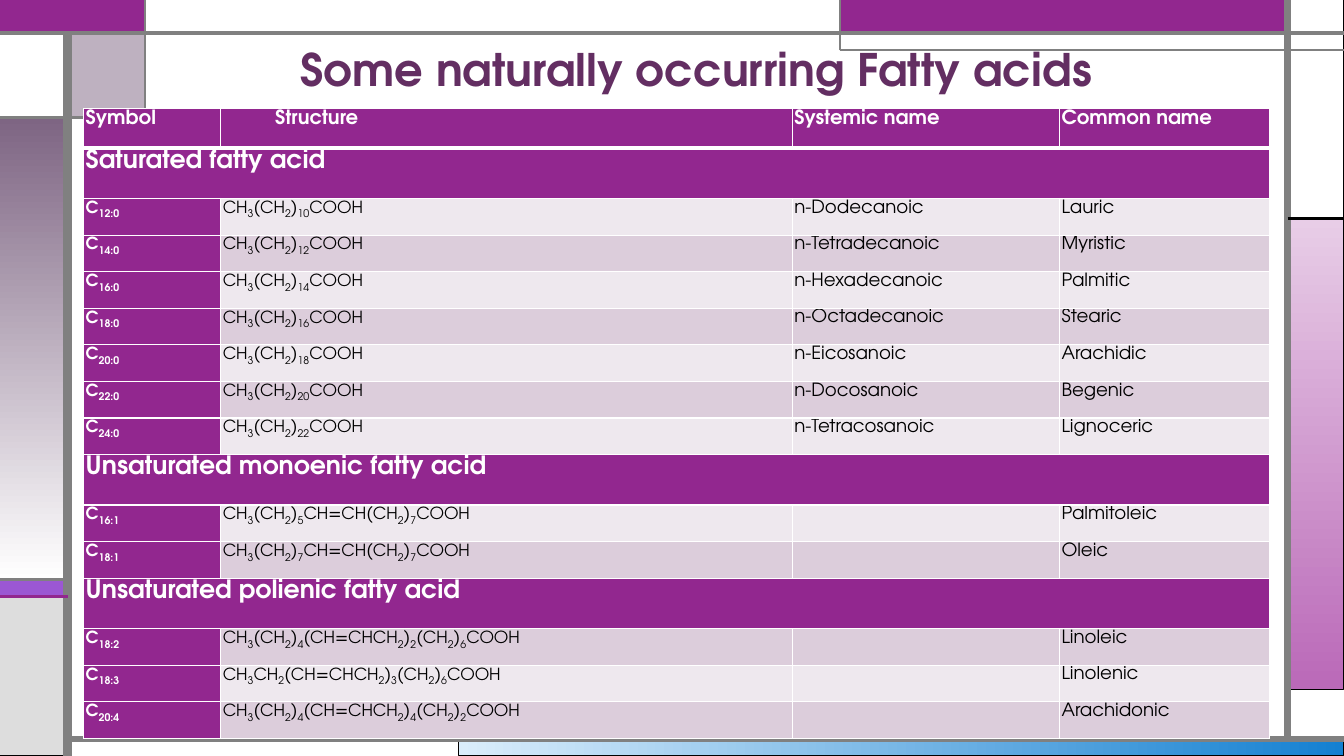
from dataclasses import dataclass
from itertools import groupby

from lxml.etree import SubElement
from pptx import Presentation
from pptx.dml.color import RGBColor
from pptx.enum.shapes import MSO_CONNECTOR as Connector, MSO_SHAPE as Shape
from pptx.enum.text import MSO_ANCHOR as Anchor, PP_ALIGN as Align
from pptx.oxml.ns import qn
from pptx.util import Inches, Pt


@dataclass(frozen=True)
class Theme:
    font: str = "TeX Gyre Adventor"
    purple: str = "92278F"
    title: str = "632E62"
    black: str = "000000"
    white: str = "FFFFFF"
    gray: str = "808080"
    silver: str = "DDDDDD"
    violet: str = "9B57D3"
    indigo: str = "755DD9"
    mauve: str = "7E6583"
    sky: tuple = ("DAEDFB", "1480D1")
    orchid: tuple = ("E8CDE7", "BA69B8")
    bands: tuple = ("EEE8EE", "DCCDDB")
    title_size: float = 32
    group_size: float = 18
    header_size: float = 14
    body_size: float = 13


@dataclass(frozen=True)
class Box:
    left: float
    top: float
    width: float
    height: float


THEME = Theme()
SUBSCRIPTS = "0123456789:"

HEADERS = ["Symbol", "Structure", "Systemic name", "Common name"]
GROUPS = {
    "Saturated fatty acid": [
        ("С12:0", "СН3(СН2)10СООН", "n-Dodecanoic", "Lauric"),
        ("С14:0", "СН3(СН2)12СООН", "n-Tetradecanoic", "Myristic"),
        ("С16:0", "СН3(СН2)14СООН", "n-Hexadecanoic", "Palmitic"),
        ("С18:0", "СН3(СН2)16СООН", "n-Octadecanoic", "Stearic"),
        ("С20:0", "СН3(СН2)18СООН", "n-Eicosanoic", "Arachidic"),
        ("С22:0", "СН3(СН2)20СООН", "n-Docosanoic", "Begenic"),
        ("С24:0", "СН3(СН2)22СООН", "n-Tetracosanoic", "Lignoceric"),
    ],
    "Unsaturated monoenic fatty acid": [
        ("С16:1", "СН3(СН2)5СН=СН(СН2)7СООН", "", "Palmitoleic"),
        ("С18:1", "СН3(СН2)7СН=СН(СН2)7СООН", "", "Oleic"),
    ],
    "Unsaturated polienic fatty acid": [
        ("С18:2", "СН3(СН2)4(СН=СНСН2)2(СН2)6СООН", "", "Linoleic"),
        ("С18:3", "СН3СН2(СН=СНСН2)3(СН2)6СООН", "", "Linolenic"),
        ("С20:4", "СН3(СН2)4(СН=СНСН2)4(СН2)2СООН", "", "Arachidonic"),
    ],
}


def rgb(color):
    return RGBColor.from_string(color)


def write(frame, text, size, color, bold=False, align=Align.JUSTIFY,
          spacing=1.07, after=0, indent=0, formula=False):
    """Write one paragraph; in a formula, digits and colons become subscripts."""
    paragraph = frame.paragraphs[0]
    paragraph.alignment = align
    paragraph.line_spacing = spacing
    paragraph.space_after = Pt(after)
    if indent:
        paragraph._p.get_or_add_pPr().set("marL", str(Inches(indent)))
    for lowered, letters in groupby(text, lambda c: formula and c in SUBSCRIPTS):
        run = paragraph.add_run()
        run.text = "".join(letters)
        font = run.font
        font.name, font.size, font.bold = THEME.font, Pt(size), bold
        font.color.rgb = rgb(color)
        if lowered:
            run._r.get_or_add_rPr().set("baseline", "-25000")


def add_panel(slide, edges, fill, line=THEME.black, weight=0.75, angle=0, alpha=None):
    """Draw a rectangle from its left, top, right and bottom edges."""
    left, top, right, bottom = edges
    panel = slide.shapes.add_shape(Shape.RECTANGLE, Inches(left), Inches(top),
                                   Inches(right - left), Inches(bottom - top))
    panel.shadow.inherit = False
    panel.line.color.rgb = rgb(line)
    panel.line.width = Pt(weight)
    if isinstance(fill, tuple):
        panel.fill.gradient()
        panel.fill.gradient_angle = angle
        for stop, color in zip(panel.fill.gradient_stops, fill):
            stop.color.rgb = rgb(color)
    else:
        panel.fill.solid()
        panel.fill.fore_color.rgb = rgb(fill)
    if alpha:
        tint = panel._element.spPr.find(qn("a:solidFill")).find(qn("a:srgbClr"))
        SubElement(tint, qn("a:alpha")).set("val", str(alpha * 1000))


def add_rule(slide, ends, weight, color=THEME.gray):
    rule = slide.shapes.add_connector(Connector.STRAIGHT, *map(Inches, ends))
    rule.line.color.rgb = rgb(color)
    rule.line.width = Pt(weight)
    SubElement(rule._element.spPr, qn("a:effectLst"))


def add_frame(slide, box):
    """Draw the coloured panels and gray rules around the slide's edge."""
    t = THEME
    left, top = box.left, box.top
    right, bottom = left + box.width, top + box.height
    rail, tab, banner, side = left + 0.67, left + 1.44, left + 8.33, right - 0.56
    strip, lip, shelf, step = top + 0.33, top + 0.5, top + 1.17, top + 2.17
    stripe, stripe_end, floor = top + 5.75, top + 5.92, bottom - 0.17

    add_panel(slide, (left + 4.55, floor, right, bottom), t.sky)
    add_panel(slide, (side, step, right, top + 6.84), t.orchid, angle=270)
    add_panel(slide, (left, stripe, rail, stripe_end), t.violet)
    add_panel(slide, (left, stripe_end, rail, bottom), t.silver)
    add_panel(slide, (side, top, right, step), t.white)
    add_panel(slide, (banner, top, side, strip), t.purple, t.indigo)
    add_panel(slide, (rail, strip, tab, shelf), t.mauve, alpha=50)
    add_panel(slide, (left, shelf, rail, stripe), (t.mauve, t.white), angle=270)
    add_panel(slide, (left, strip, rail, shelf), t.white)
    add_panel(slide, (left, top, tab, strip), t.purple, t.purple, 1.5)
    add_panel(slide, (tab, top, banner, strip), t.white, t.gray)

    add_rule(slide, (rail, bottom, rail, strip), 6)
    add_rule(slide, (rail, floor, right, floor), 4.5)
    add_rule(slide, (side, floor, side, top), 4.5)
    add_rule(slide, (left, strip, right, strip), 3)
    add_rule(slide, (right, lip, banner, lip), 1.5)
    add_rule(slide, (banner, lip, banner, top), 1.5)
    add_rule(slide, (side, step, right, step), 2.25, t.black)
    add_rule(slide, (tab, top, tab, shelf), 1.5)
    add_rule(slide, (tab, shelf, left, shelf), 2.25)
    add_rule(slide, (rail, stripe, left, stripe), 2.25)
    add_rule(slide, (rail, stripe_end, left, stripe_end), 2.25, t.purple)


def add_title(slide, box, text):
    title = slide.shapes.add_textbox(Inches(box.left), Inches(box.top),
                                     Inches(box.width), Inches(box.height)).text_frame
    title.word_wrap = True
    title.vertical_anchor = Anchor.BOTTOM
    write(title, text, THEME.title_size, THEME.title, bold=True,
          align=Align.CENTER, spacing=0.9)


def style_cell(cell, fill, top=1, bottom=1):
    """Set margins, white borders and the fill of a cell."""
    cell.margin_left = cell.margin_right = Inches(0.02)
    cell.margin_top = cell.margin_bottom = 0
    properties = cell._tc.get_or_add_tcPr()
    for side, weight in (("L", 1), ("R", 1), ("T", top), ("B", bottom)):
        border = SubElement(properties, qn(f"a:ln{side}"), w=str(Pt(weight)))
        SubElement(SubElement(border, qn("a:solidFill")), qn("a:srgbClr"), val=THEME.white)
    cell.fill.solid()
    cell.fill.fore_color.rgb = rgb(fill)


def add_acid_table(slide, box):
    rows = [HEADERS]
    for group, acids in GROUPS.items():
        rows += [[group], *acids]
    header_height, group_height = 0.39, 0.5
    acid_height = ((box.height - header_height - group_height * len(GROUPS))
                   / (len(rows) - 1 - len(GROUPS)))
    table = slide.shapes.add_table(len(rows), len(HEADERS), Inches(box.left), Inches(box.top),
                                   Inches(box.width), Inches(box.height)).table
    for column, width in zip(table.columns, (1.36, 5.67, 2.65, 2.08)):
        column.width = Inches(width)

    for r, texts in enumerate(rows):
        is_header, is_group = r == 0, len(texts) == 1
        height = header_height if is_header else group_height if is_group else acid_height
        table.rows[r].height = Inches(height)
        for c in range(len(HEADERS)):
            strong = is_header or is_group or c == 0
            style_cell(table.cell(r, c), THEME.purple if strong else THEME.bands[r % 2],
                       top=3 if r == 1 else 1, bottom=3 if is_header else 1)
        if is_group:
            table.cell(r, 0).merge(table.cell(r, len(HEADERS) - 1))
        size = (THEME.header_size if is_header else
                THEME.group_size if is_group else THEME.body_size)
        for c, text in enumerate(texts):
            strong = is_header or is_group or c == 0
            write(table.cell(r, c).text_frame, text, size,
                  THEME.white if strong else THEME.black, bold=strong,
                  after=0 if is_group else 8,
                  indent=0.52 if is_header and c == 1 else 0, formula=c < 2)


def main():
    deck = Presentation()
    deck.slide_width, deck.slide_height = Inches(13.33), Inches(7.5)
    slide = deck.slides.add_slide(deck.slide_layouts[6])
    add_frame(slide, Box(0, 0, 13.33, 7.5))
    add_title(slide, Box(1.66, 0.33, 10.5, 0.67), "Some naturally occurring Fatty acids")
    add_acid_table(slide, Box(0.83, 1.08, 11.75, 6.25))
    deck.save("out.pptx")


if __name__ == "__main__":
    main()
